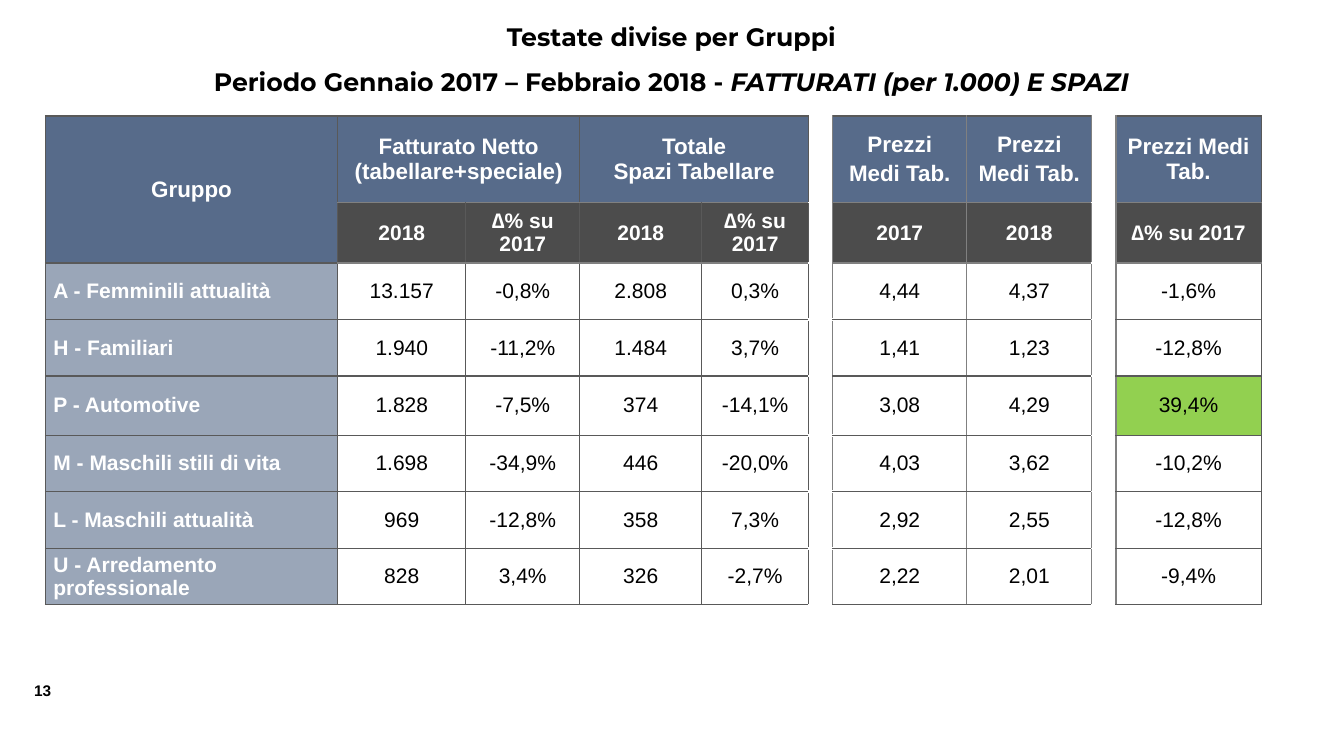
from dataclasses import dataclass

from lxml import etree
from pptx import Presentation
from pptx.dml.color import RGBColor
from pptx.enum.text import MSO_ANCHOR, PP_ALIGN
from pptx.oxml.ns import qn
from pptx.table import _Cell
from pptx.text.text import _Paragraph
from pptx.util import Inches, Pt

CENTER, LEFT = PP_ALIGN.CENTER, PP_ALIGN.LEFT
TOP, MIDDLE = MSO_ANCHOR.TOP, MSO_ANCHOR.MIDDLE
TITLE_ONLY_LAYOUT = 5


@dataclass(frozen=True)
class Theme:
    title_font: str = "Montserrat"
    body_font: str = "Arial"
    blue: str = "576B8A"
    black: str = "000000"
    white: str = "FFFFFF"
    green: str = "92D050"
    dark_line: str = "595959"
    light_line: str = "808080"
    title_size: int = 18
    header_size: int = 16
    cell_size: int = 15
    number_size: int = 11


THEME = Theme()


@dataclass(frozen=True)
class CellStyle:
    size: int
    color: str
    bold: bool
    fill: str | None = None
    opacity: int = 100
    align: PP_ALIGN = CENTER
    margins: tuple[float, float, float, float] = (0, 0, 0, 0)


HEADER_MARGINS = (0.1, 0.05, 0.1, 0.05)
GROUP_HEADER = CellStyle(THEME.header_size, THEME.white, True, THEME.blue, margins=HEADER_MARGINS)
YEAR_HEADER = CellStyle(THEME.cell_size, THEME.white, True, THEME.black, 70, margins=HEADER_MARGINS)
GROUP_NAME = CellStyle(THEME.cell_size, THEME.white, True, THEME.blue, 60, LEFT, (0.08, 0, 0, 0))
VALUE = CellStyle(THEME.cell_size, THEME.black, False)
HIGHLIGHT = CellStyle(THEME.cell_size, THEME.black, False, THEME.green)
GAP = CellStyle(THEME.cell_size, THEME.black, False, THEME.white)

COLUMN_WIDTHS = [2.9, 1.27, 1.13, 1.21, 1.06, 0.24, 1.33, 1.24, 0.24, 1.44]
ROW_HEIGHTS = [0.86, 0.6, 0.56, 0.56, 0.59, 0.56, 0.56, 0.56]
GAP_COLUMNS = (5, 8)
PRICE_COLUMNS = (6, 7)
HIGHLIGHT_CELL = (4, 9)
MERGES = [((0, 0), (1, 0)), ((0, 1), (0, 2)), ((0, 3), (0, 4))]

CHANGE = "∆% su 2017"
ROWS = [
    ["Gruppo", "Fatturato Netto (tabellare+speciale)", "", "Totale\nSpazi Tabellare", "", "",
     "Prezzi\nMedi Tab.", "Prezzi\nMedi Tab.", "", "Prezzi Medi Tab."],
    ["", "2018", CHANGE, "2018", CHANGE, "", "2017", "2018", "", CHANGE],
    ["A - Femminili attualità", "13.157", "-0,8%", "2.808", "0,3%", "", "4,44", "4,37", "", "-1,6%"],
    ["H - Familiari", "1.940", "-11,2%", "1.484", "3,7%", "", "1,41", "1,23", "", "-12,8%"],
    ["P - Automotive", "1.828", "-7,5%", "374", "-14,1%", "", "3,08", "4,29", "", "39,4%"],
    ["M - Maschili stili di vita", "1.698", "-34,9%", "446", "-20,0%", "", "4,03", "3,62", "", "-10,2%"],
    ["L - Maschili attualità", "969", "-12,8%", "358", "7,3%", "", "2,92", "2,55", "", "-12,8%"],
    ["U - Arredamento professionale", "828", "3,4%", "326", "-2,7%", "", "2,22", "2,01", "", "-9,4%"],
]


def add_run(paragraph: _Paragraph, text: str, font_name: str, size: int, color: str,
            bold: bool = True, italic: bool = False) -> None:
    run = paragraph.add_run()
    run.text = text
    run.font.name = font_name
    run.font.size = Pt(size)
    run.font.bold = bold
    run.font.italic = italic
    run.font.color.rgb = RGBColor.from_string(color)


def style_for(row: int, column: int) -> CellStyle:
    if column in GAP_COLUMNS:
        return GAP
    if (row, column) == HIGHLIGHT_CELL:
        return HIGHLIGHT
    if row == 0 or (row == 1 and column == 0):
        return GROUP_HEADER
    if row == 1:
        return YEAR_HEADER
    return GROUP_NAME if column == 0 else VALUE


def vertical_line(line: int) -> tuple[str, float]:
    outer = line <= GAP_COLUMNS[0] or line == len(COLUMN_WIDTHS)
    return (THEME.dark_line if outer else THEME.light_line), 1


def horizontal_line(line: int, column: int) -> tuple[str, float]:
    if column in GAP_COLUMNS:
        thick = column == GAP_COLUMNS[0] and 3 <= line < len(ROW_HEIGHTS)
        return THEME.white, 2.25 if thick else 1
    return (THEME.light_line if line in (1, 2) and column > 0 else THEME.dark_line), 1


def set_borders(cell: _Cell, row: int, column: int) -> None:
    borders = {
        "a:lnL": vertical_line(column),
        "a:lnR": vertical_line(column + 1),
        "a:lnT": horizontal_line(row, column),
        "a:lnB": horizontal_line(row + 1, column),
    }
    properties = cell._tc.get_or_add_tcPr()
    for position, (tag, (color, width)) in enumerate(borders.items()):
        line = etree.Element(qn(tag), w=str(Pt(width)))
        solid = etree.SubElement(line, qn("a:solidFill"))
        etree.SubElement(solid, qn("a:srgbClr"), val=color)
        properties.insert(position, line)


def set_fill(cell: _Cell, style: CellStyle) -> None:
    if style.fill is None:
        cell.fill.background()
        return
    cell.fill.solid()
    cell.fill.fore_color.rgb = RGBColor.from_string(style.fill)
    if style.opacity < 100:
        color = cell._tc.tcPr.find(qn("a:solidFill")).find(qn("a:srgbClr"))
        etree.SubElement(color, qn("a:alpha"), val=str(style.opacity * 1000))


def write_cell(cell: _Cell, text: str, row: int, column: int) -> None:
    style = style_for(row, column)
    set_fill(cell, style)
    set_borders(cell, row, column)
    cell.vertical_anchor = MIDDLE
    cell.margin_left, cell.margin_top, cell.margin_right, cell.margin_bottom = map(Inches, style.margins)
    if not text:
        return
    for index, line in enumerate(text.split("\n")):
        frame = cell.text_frame
        paragraph = frame.add_paragraph() if index else frame.paragraphs[0]
        paragraph.alignment = style.align
        if index and column in PRICE_COLUMNS:
            paragraph.space_before = Pt(3)
        add_run(paragraph, line, THEME.body_font, style.size, style.color, style.bold)


def main() -> None:
    presentation = Presentation()
    presentation.slide_width, presentation.slide_height = Inches(13.33), Inches(7.5)
    slide = presentation.slides.add_slide(presentation.slide_layouts[TITLE_ONLY_LAYOUT])

    # Title
    title = slide.shapes.title
    title.left, title.top, title.width, title.height = map(Inches, (1.11, 0.02, 11.1, 1.07))
    title.text_frame.vertical_anchor = TOP
    title.text_frame.margin_top = Inches(0.04)
    paragraph = title.text_frame.paragraphs[0]
    paragraph.alignment = CENTER
    paragraph.line_spacing = 1.5
    title_look = (THEME.title_font, THEME.title_size, THEME.black)
    add_run(paragraph, "Testate divise per Gruppi", *title_look)
    paragraph.add_line_break()
    add_run(paragraph, "Periodo Gennaio 2017 – Febbraio 2018 - ", *title_look)
    add_run(paragraph, "FATTURATI (per 1.000) E SPAZI", *title_look, italic=True)

    # Table
    table = slide.shapes.add_table(
        len(ROW_HEIGHTS), len(COLUMN_WIDTHS), Inches(0.45), Inches(1.15),
        Inches(sum(COLUMN_WIDTHS)), Inches(sum(ROW_HEIGHTS))).table
    table.first_row = table.horz_banding = False
    for column, width in zip(table.columns, COLUMN_WIDTHS):
        column.width = Inches(width)
    for row, height in zip(table.rows, ROW_HEIGHTS):
        row.height = Inches(height)
    for first, last in MERGES:
        table.cell(*first).merge(table.cell(*last))
    for row_index, texts in enumerate(ROWS):
        for column_index, text in enumerate(texts):
            write_cell(table.cell(row_index, column_index), text, row_index, column_index)

    # Page number
    number = slide.shapes.add_textbox(*map(Inches, (0.24, 6.71, 0.42, 0.29)))
    number.text_frame.word_wrap = False
    add_run(number.text_frame.paragraphs[0], "13", THEME.body_font, THEME.number_size, THEME.black)

    presentation.save("out.pptx")


if __name__ == "__main__":
    main()
